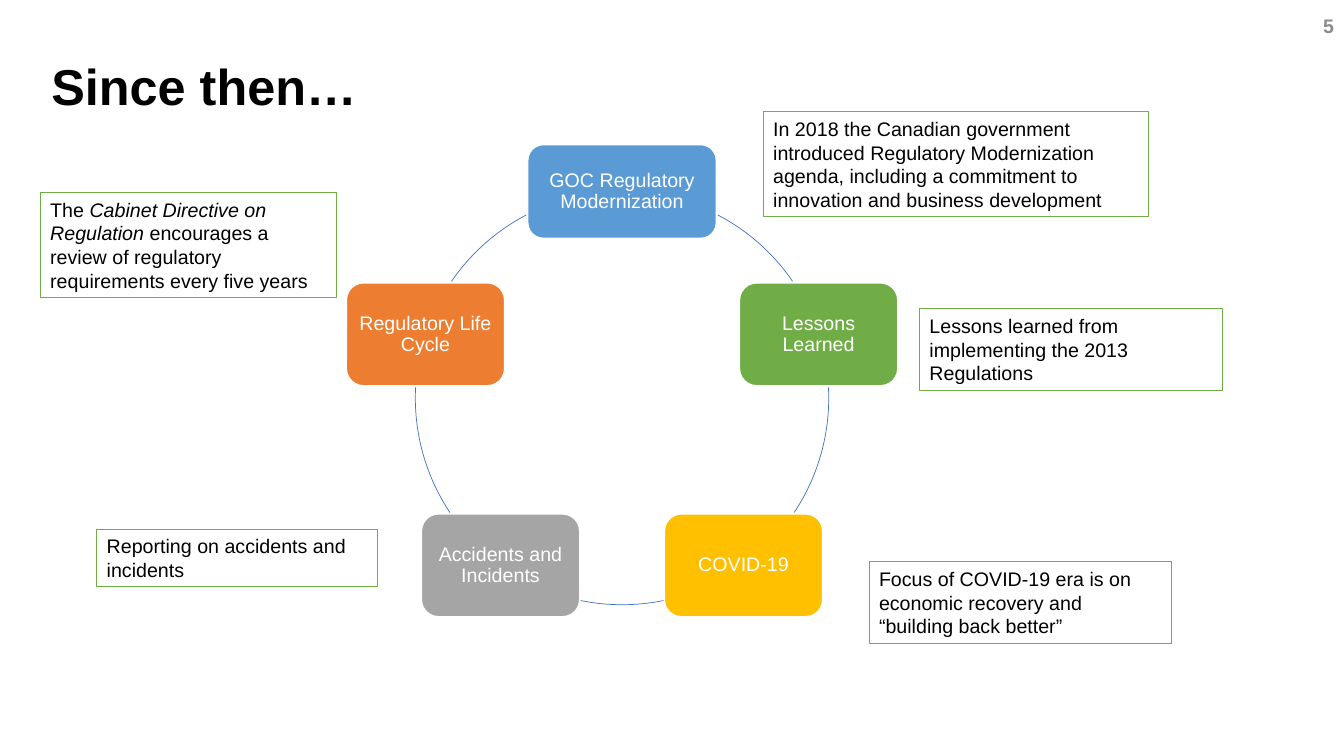
from dataclasses import dataclass
from math import cos, radians, sin

from pptx import Presentation
from pptx.dml.color import RGBColor
from pptx.enum.shapes import MSO_SHAPE
from pptx.enum.text import MSO_ANCHOR, PP_ALIGN
from pptx.util import Inches, Pt


@dataclass(frozen=True)
class Theme:
    font: str = "Arial"
    black: str = "000000"
    white: str = "FFFFFF"
    grey: str = "8C8C8C"
    blue: str = "5B9BD5"
    green: str = "70AD47"
    gold: str = "FFC000"
    silver: str = "A5A5A5"
    orange: str = "ED7D31"
    ring: str = "4472C4"
    head: int = 36
    body: int = 14


THEME = Theme()
MID_X, MID_Y, RADIUS = 6.17, 3.95, 2.05

# Clockwise from the top: label, fill, width, height
NODES = [
    ("GOC Regulatory Modernization", THEME.blue, 1.87, 0.93),
    ("Lessons Learned", THEME.green, 1.57, 1.02),
    ("COVID-19", THEME.gold, 1.57, 1.02),
    ("Accidents and Incidents", THEME.silver, 1.57, 1.02),
    ("Regulatory Life Cycle", THEME.orange, 1.57, 1.02),
]

# Start and end in degrees, clockwise from the right
ARCS = [(297.6, 325.6), (357, 33.6), (78.4, 101.6), (146.4, 183), (214.4, 242.4)]

# Runs of (text, italic), then left, top, width, height
NOTES = [
    ([("In 2018 the Canadian government introduced Regulatory Modernization "
       "agenda, including a commitment to innovation and business development",
       False)], (7.57, 1.11, 3.82, 1.04)),
    ([("Lessons learned from implementing the 2013 Regulations", False)],
     (9.12, 3.06, 3.01, 0.81)),
    ([("Focus of COVID-19 era is on economic recovery and “building back better”",
       False)], (8.62, 5.57, 3, 0.81)),
    ([("Reporting on accidents and incidents", False)], (0.96, 5.25, 2.78, 0.57)),
    ([("The ", False), ("Cabinet Directive on Regulation ", True),
      ("encourages a review of regulatory requirements every five years", False)],
     (0.4, 1.91, 2.94, 1.04)),
]


def rgb(code):
    return RGBColor.from_string(code)


def write(shape, runs, size=THEME.body, color=THEME.black, bold=False,
          align=PP_ALIGN.LEFT, anchor=MSO_ANCHOR.MIDDLE, space=1.0,
          pad=(0.1, 0.05, 0.1, 0.05)):
    """Fill a shape with one paragraph; runs is a string or (text, italic) pairs."""
    frame = shape.text_frame
    frame.word_wrap = True
    frame.vertical_anchor = anchor
    (frame.margin_left, frame.margin_top,
     frame.margin_right, frame.margin_bottom) = map(Inches, pad)
    para = frame.paragraphs[0]
    para.alignment = align
    para.line_spacing = space
    for text, slant in [(runs, False)] if isinstance(runs, str) else runs:
        run = para.add_run()
        run.text = text
        font = run.font
        font.name, font.size = THEME.font, Pt(size)
        font.bold, font.italic = bold, slant
        font.color.rgb = rgb(color)


def add_form(slide, kind, box, line, weight, fill=None):
    shape = slide.shapes.add_shape(kind, *map(Inches, box))
    shape.shadow.inherit = False
    if fill:
        shape.fill.solid()
        shape.fill.fore_color.rgb = rgb(fill)
    else:
        shape.fill.background()
    shape.line.color.rgb = rgb(line)
    shape.line.width = Pt(weight)
    return shape


def add_node(slide, place, label, fill, width, height):
    angle = radians(place * 360 / len(NODES) - 90)
    left = MID_X + RADIUS * cos(angle) - width / 2
    top = MID_Y + RADIUS * sin(angle) - height / 2
    node = add_form(slide, MSO_SHAPE.ROUNDED_RECTANGLE,
                    (left, top, width, height), THEME.white, 1, fill)
    write(node, label, color=THEME.white, align=PP_ALIGN.CENTER, space=0.9,
          pad=(0.06,) * 4)


def add_arc(slide, start, end):
    box = (MID_X - RADIUS, MID_Y - RADIUS, 2 * RADIUS, 2 * RADIUS)
    arc = add_form(slide, MSO_SHAPE.ARC, box, THEME.ring, 0.5)
    # Angles are stored in 1/60000 degree, adjustments in 1/100000
    for side, angle in enumerate((start, end)):
        arc.adjustments[side] = angle * 0.6


def add_title(slide, text):
    title = slide.shapes.title
    title.left, title.top = Inches(0.51), Inches(0.5)
    title.width, title.height = Inches(12.32), Inches(0.71)
    write(title, text, size=THEME.head, bold=True, anchor=MSO_ANCHOR.BOTTOM,
          space=0.9, pad=(0, 0.05, 0.1, 0.05))


def add_number(slide, text):
    box = slide.shapes.add_textbox(*map(Inches, (12.84, 0, 0.49, 0.5)))
    write(box, text, color=THEME.grey, bold=True, align=PP_ALIGN.RIGHT)


def main():
    deck = Presentation()
    deck.slide_width, deck.slide_height = Inches(13.33), Inches(7.5)
    slide = deck.slides.add_slide(deck.slide_layouts[5])
    add_title(slide, "Since then…")
    add_number(slide, "5")
    for start, end in ARCS:
        add_arc(slide, start, end)
    for place, node in enumerate(NODES):
        add_node(slide, place, *node)
    for runs, box in NOTES:
        note = add_form(slide, MSO_SHAPE.RECTANGLE, box, THEME.green, 0.75)
        write(note, runs)
    deck.save("out.pptx")


if __name__ == "__main__":
    main()
